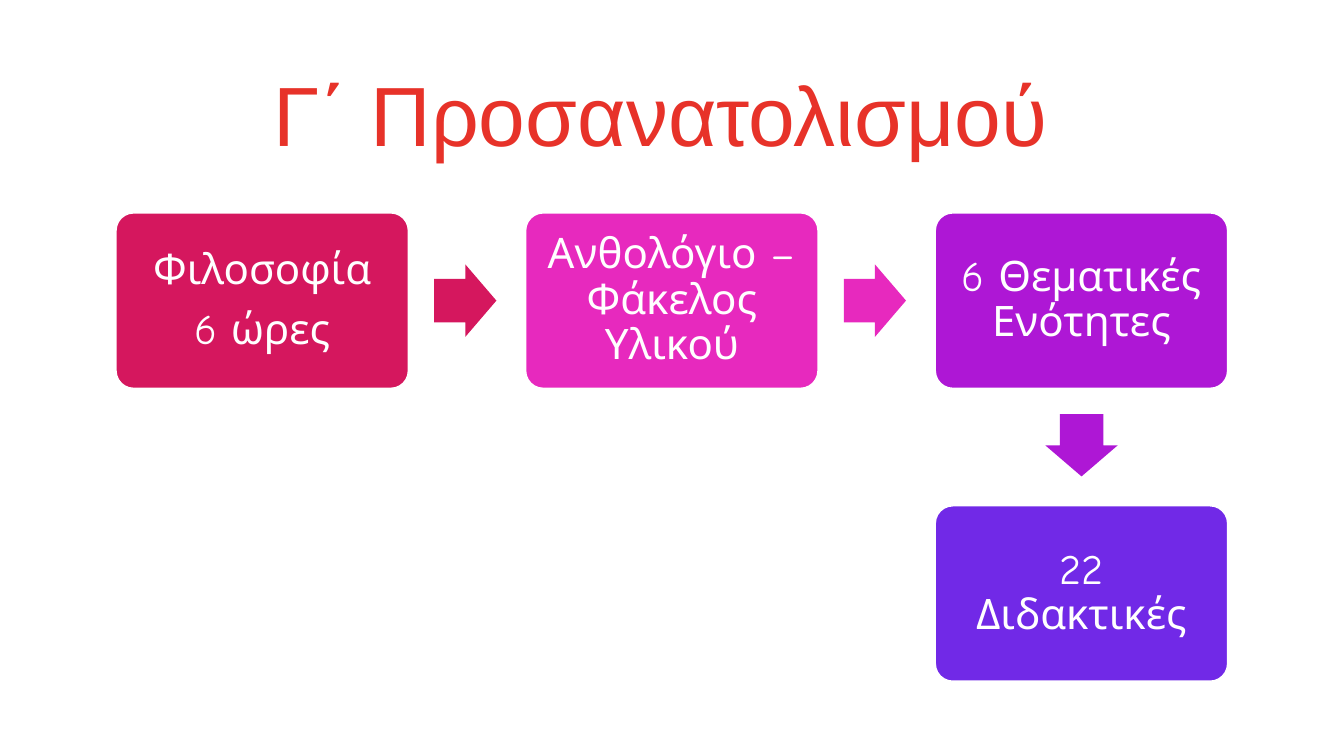
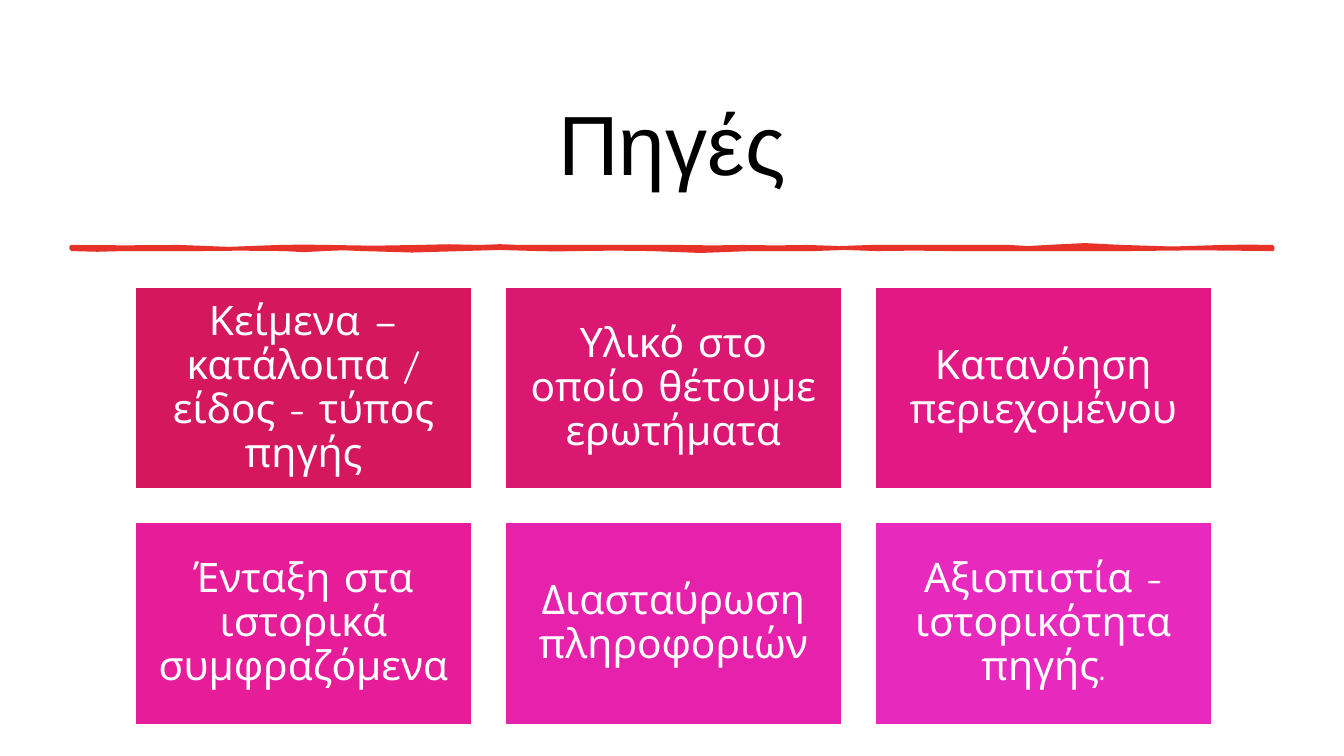
from dataclasses import dataclass

import pptx
import pptx.util
import pptx.dml.color
import pptx.enum.shapes
import pptx.enum.text
import pptx.presentation
import pptx.shapes.autoshape
import pptx.slide

Pt = pptx.util.Pt
RGBColor = pptx.dml.color.RGBColor
Shape = pptx.shapes.autoshape.Shape
Slide = pptx.slide.Slide
PRESET = pptx.enum.shapes.MSO_SHAPE
MIDDLE = pptx.enum.text.MSO_ANCHOR.MIDDLE
CENTER = pptx.enum.text.PP_ALIGN.CENTER

# Shared colours and fonts
WHITE = RGBColor(0xFF, 0xFF, 0xFF)
BLACK = RGBColor(0x00, 0x00, 0x00)
RED = RGBColor(0xE7, 0x32, 0x29)
CRIMSON = RGBColor(0xD5, 0x17, 0x5E)
RASPBERRY = RGBColor(0xDB, 0x18, 0x71)
CERISE = RGBColor(0xE2, 0x19, 0x85)
ROSE = RGBColor(0xE6, 0x1C, 0x99)
ORCHID = RGBColor(0xE6, 0x22, 0xAC)
MAGENTA = RGBColor(0xE7, 0x29, 0xBE)
PURPLE = RGBColor(0xAE, 0x17, 0xD5)
VIOLET = RGBColor(0x71, 0x29, 0xE7)
TITLE_FONT = "Arial"
CARD_FONT = "Comic Neue"


@dataclass(frozen=True)
class Box:
    """A rectangle in points."""
    left: float
    top: float
    width: float
    height: float


@dataclass(frozen=True)
class Card:
    lines: tuple[str, ...]
    color: RGBColor
    column: int
    row: int


@dataclass(frozen=True)
class Grid:
    """Equal cards at equal steps, all in points."""
    first: Box
    column_step: float
    row_step: float
    preset: PRESET
    font_size: float

    def cell(self, card: Card) -> Box:
        return Box(self.first.left + card.column * self.column_step,
                   self.first.top + card.row * self.row_step,
                   self.first.width, self.first.height)


@dataclass(frozen=True)
class Wave:
    """One S-curve of a brush edge: its end and its two vertical pulls."""
    end: float
    first_pull: float
    second_pull: float


SLIDE_BOX = Box(0, 0, 960, 540)

# Slide 1: flow of cards
FLOW_GRID = Grid(Box(82.9, 152.1, 208.8, 125.3), 292.6, 209.2,
                 PRESET.ROUNDED_RECTANGLE, 30)
FLOW_CARDS = (
    Card(("Φιλοσοφία", "6 ώρες"), CRIMSON, 0, 0),
    Card(("Ανθολόγιο – Φάκελος Υλικού",), MAGENTA, 1, 0),
    Card(("6 Θεματικές Ενότητες",), PURPLE, 2, 0),
    Card(("22 Διδακτικές",), VIOLET, 2, 1),
)
ARROW_WIDTH, ARROW_HEIGHT, ARROW_GAP = 44.4, 51.8, 18.5

# Slide 2: grid of cards, filled row by row
SOURCE_COLUMNS = 3
SOURCE_GRID = Grid(Box(96.8, 205.4, 240, 144), 264.2, 168,
                   PRESET.RECTANGLE, 29)
SOURCE_TEXTS = (
    ("Κείμενα – κατάλοιπα / είδος - τύπος πηγής", CRIMSON),
    ("Υλικό στο οποίο θέτουμε ερωτήματα", RASPBERRY),
    ("Κατανόηση περιεχομένου", CERISE),
    ("Ένταξη στα ιστορικά συμφραζόμενα", ROSE),
    ("Διασταύρωση πληροφοριών", ORCHID),
    ("Αξιοπιστία - ιστορικότητα πηγής.", MAGENTA),
)

# Slide 2: the two edges of the brush stroke
STROKE_LEFT, STROKE_RIGHT = 51, 909
STROKE_LOWER, STROKE_UPPER = 178, 176.4
LOWER_EDGE = (
    Wave(88, 0.7, 0.7), Wave(141, 0, 0), Wave(203, 0.7, -1.4),
    Wave(231, 1.4, 0.7), Wave(259, 0, -1.4), Wave(330, 1.4, 1.4),
    Wave(384, -1.4, -0.7), Wave(412, 1.4, -0.7), Wave(465, 1.4, -2.2),
    Wave(536, 2.9, 0.7), Wave(581, -0.7, 0.7), Wave(626, -0.7, -1.4),
    Wave(680, 1.4, -2.2), Wave(742, 2.9, -2.9), Wave(804, 2.9, -2.9),
    Wave(STROKE_RIGHT, 2.9, -4.3),
)
UPPER_EDGE = (
    Wave(873, 0, -0.7), Wave(802, 0.7, 2.2), Wave(748, -2.2, -1.4),
    Wave(721, 1.4, 0.7), Wave(667, 0, 0), Wave(622, 0.7, -0.7),
    Wave(577, 0.7, 1.4), Wave(531, -1.4, 2.2), Wave(487, -1.4, 2.2),
    Wave(424, -2.2, 2.2), Wave(371, -2.2, 2.2), Wave(343, -2.2, 0.7),
    Wave(298, 0, -1.4), Wave(235, 1.4, 0), Wave(199, 0, -0.7),
    Wave(128, 1.4, 2.2), Wave(STROKE_LEFT, -2.2, 2.9),
)


def add_filled_shape(slide: Slide, preset: PRESET, box: Box,
                     color: RGBColor) -> Shape:
    shape = slide.shapes.add_shape(preset, Pt(box.left), Pt(box.top),
                                   Pt(box.width), Pt(box.height))
    shape.shadow.inherit = False
    shape.fill.solid()
    shape.fill.fore_color.rgb = color
    shape.line.fill.background()
    return shape


def add_titled_slide(presentation: pptx.presentation.Presentation, text: str,
                     box: Box, color: RGBColor) -> Slide:
    slide = presentation.slides.add_slide(presentation.slide_layouts[5])
    title = slide.shapes.title
    # White backdrop, placed behind the title
    backdrop = add_filled_shape(slide, PRESET.RECTANGLE, SLIDE_BOX, WHITE)
    title.element.addprevious(backdrop.element)
    title.left, title.top = Pt(box.left), Pt(box.top)
    title.width, title.height = Pt(box.width), Pt(box.height)
    frame = title.text_frame
    frame.text = text
    frame.vertical_anchor = MIDDLE
    paragraph = frame.paragraphs[0]
    paragraph.alignment = CENTER
    paragraph.font.name = TITLE_FONT
    paragraph.font.size = Pt(60)
    paragraph.font.color.rgb = color
    return slide


def add_card(slide: Slide, grid: Grid, card: Card) -> None:
    shape = add_filled_shape(slide, grid.preset, grid.cell(card), card.color)
    if grid.preset == PRESET.ROUNDED_RECTANGLE:
        shape.adjustments[0] = 0.1
    shape.line.color.rgb = WHITE
    shape.line.width = Pt(1)
    frame = shape.text_frame
    frame.word_wrap = True
    frame.vertical_anchor = MIDDLE
    frame.margin_left = frame.margin_right = Pt(8.6)
    frame.margin_top = frame.margin_bottom = Pt(8.6)
    frame.text = "\n".join(card.lines)
    for paragraph in frame.paragraphs:
        paragraph.alignment = CENTER
        paragraph.line_spacing = 0.9
        paragraph.space_after = Pt(0.35 * grid.font_size)
        paragraph.font.name = CARD_FONT
        paragraph.font.size = Pt(grid.font_size)
        paragraph.font.color.rgb = WHITE


def add_flow_arrow(slide: Slide, source: Card, target: Card) -> None:
    """Point from one card to the next, to the right or downwards."""
    cell = FLOW_GRID.cell(source)
    center_x = cell.left + cell.width / 2
    center_y = cell.top + cell.height / 2
    reach = ARROW_GAP + ARROW_WIDTH / 2
    downwards = target.row > source.row
    if downwards:
        center_y += cell.height / 2 + reach
    else:
        center_x += cell.width / 2 + reach
    box = Box(center_x - ARROW_WIDTH / 2, center_y - ARROW_HEIGHT / 2,
              ARROW_WIDTH, ARROW_HEIGHT)
    arrow = add_filled_shape(slide, PRESET.RIGHT_ARROW, box, source.color)
    arrow.adjustments[0] = 0.6
    arrow.adjustments[1] = 0.5
    arrow.rotation = 90 if downwards else 0


def edge_points(start: float, level: float, waves: tuple[Wave, ...],
                steps: int = 2) -> list[tuple[int, int]]:
    """Sample the cubic curve of each wave."""
    points = [(Pt(start), Pt(level))]
    for wave in waves:
        for step in range(1, steps + 1):
            t = step / steps
            x = start + t * (wave.end - start)
            y = level + 3 * t * (1 - t) * ((1 - t) * wave.first_pull
                                           + t * wave.second_pull)
            points.append((Pt(x), Pt(y)))
        start = wave.end
    return points


def add_brush_stroke(slide: Slide) -> None:
    points = (edge_points(STROKE_LEFT, STROKE_LOWER, LOWER_EDGE)
              + edge_points(STROKE_RIGHT, STROKE_UPPER, UPPER_EDGE))
    builder = slide.shapes.build_freeform(*points[0])
    builder.add_line_segments(points[1:], close=True)
    stroke = builder.convert_to_shape()
    stroke.shadow.inherit = False
    stroke.fill.solid()
    stroke.fill.fore_color.rgb = RED
    stroke.line.color.rgb = RED
    stroke.line.width = Pt(2.75)


def build_flow_slide(presentation: pptx.presentation.Presentation) -> None:
    slide = add_titled_slide(presentation, "Γ΄ Προσανατολισμού ",
                             Box(66, 28.8, 828, 104.4), RED)
    for card in FLOW_CARDS:
        add_card(slide, FLOW_GRID, card)
    for source, target in zip(FLOW_CARDS, FLOW_CARDS[1:]):
        add_flow_arrow(slide, source, target)


def build_sources_slide(presentation: pptx.presentation.Presentation) -> None:
    slide = add_titled_slide(presentation, "Πηγές",
                             Box(50, 49.6, 860, 103.7), BLACK)
    add_brush_stroke(slide)
    for index, (text, color) in enumerate(SOURCE_TEXTS):
        row, column = divmod(index, SOURCE_COLUMNS)
        add_card(slide, SOURCE_GRID, Card((text,), color, column, row))


def main() -> None:
    presentation = pptx.Presentation()
    presentation.slide_width = Pt(SLIDE_BOX.width)
    presentation.slide_height = Pt(SLIDE_BOX.height)
    build_flow_slide(presentation)
    build_sources_slide(presentation)
    presentation.save("out.pptx")


if __name__ == "__main__":
    main()
